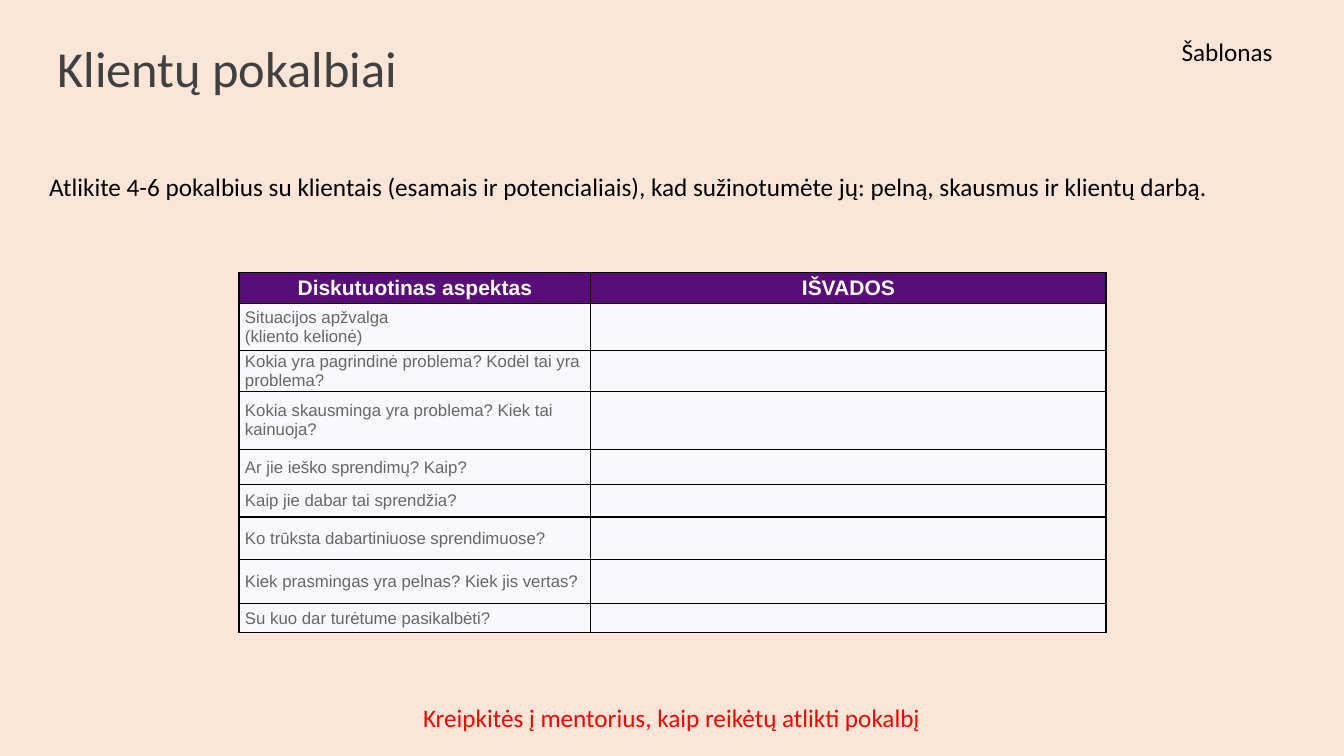
import pptx
import pptx.dml.color
import pptx.enum.shapes
import pptx.enum.text
import pptx.oxml
import pptx.oxml.ns
import pptx.util
from pptx.util import Inches

ALIGN = pptx.enum.text.PP_ALIGN
ANCHOR = pptx.enum.text.MSO_ANCHOR

TOPICS = [
    (0.47, "Situacijos apžvalga\n(kliento kelionė)"),
    (0.4, "Kokia yra pagrindinė problema? Kodėl tai yra problema?"),
    (0.58, "Kokia skausminga yra problema? Kiek tai kainuoja?"),
    (0.35, "Ar jie ieško sprendimų? Kaip?"),
    (0.32, "Kaip jie dabar tai sprendžia?"),
    (0.42, "Ko trūksta dabartiniuose sprendimuose?"),
    (0.44, "Kiek prasmingas yra pelnas? Kiek jis vertas?"),
    (0.29, "Su kuo dar turėtume pasikalbėti?"),
]


def rgb(value):
    """Turn a hex string into a colour."""
    return pptx.dml.color.RGBColor.from_string(value)


def style(paragraph, font, size, color, align=ALIGN.LEFT, bold=False):
    """Set the look of one paragraph."""
    paragraph.alignment = align
    paragraph.font.name = font
    paragraph.font.size = pptx.util.Pt(size)
    paragraph.font.color.rgb = rgb(color)
    paragraph.font.bold = bold


def add_backdrop(slide, width, height, color):
    """Cover the slide with one colour."""
    backdrop = slide.shapes.add_shape(
        pptx.enum.shapes.MSO_SHAPE.RECTANGLE, 0, 0, width, height)
    backdrop.shadow.inherit = False
    backdrop.fill.solid()
    backdrop.fill.fore_color.rgb = rgb(color)
    backdrop.line.fill.background()


def add_title(slide, box, text):
    """Place the slide title, centred vertically in its box."""
    frame = slide.shapes.add_textbox(*map(Inches, box)).text_frame
    frame.word_wrap = True
    frame.vertical_anchor = ANCHOR.MIDDLE
    frame.margin_left = frame.margin_right = 0
    frame.margin_top = frame.margin_bottom = 0
    frame.text = text
    frame.paragraphs[0].line_spacing = 0.9
    style(frame.paragraphs[0], "Calibri", 36, "404040")


def add_note(slide, box, text, color="000000", align=ALIGN.LEFT):
    """Place a single line of text that does not wrap."""
    frame = slide.shapes.add_textbox(*map(Inches, box)).text_frame
    frame.word_wrap = False
    frame.auto_size = pptx.enum.text.MSO_AUTO_SIZE.SHAPE_TO_FIT_TEXT
    frame.text = text
    style(frame.paragraphs[0], "Calibri", 18, color, align)


def add_borders(cell):
    """Draw a thin black line on every side of a cell."""
    properties = cell._tc.get_or_add_tcPr()
    for position, side in enumerate(("lnL", "lnR", "lnT", "lnB")):
        properties.insert(position, pptx.oxml.parse_xml(
            f'<a:{side} {pptx.oxml.ns.nsdecls("a")} w="12700"><a:solidFill>'
            f'<a:srgbClr val="000000"/></a:solidFill></a:{side}>'))


def fill_cell(cell, text, fill, **look):
    """Write, colour and frame one table cell."""
    cell.text = text
    cell.vertical_anchor = ANCHOR.MIDDLE
    cell.margin_left = cell.margin_right = Inches(0.06)
    cell.margin_top = cell.margin_bottom = 0
    cell.fill.solid()
    cell.fill.fore_color.rgb = rgb(fill)
    for paragraph in cell.text_frame.paragraphs:
        style(paragraph, "Arial", **look)
    add_borders(cell)


def add_interview_table(slide, box):
    """Place the table of interview topics and conclusions."""
    rows = [(0.31, "Diskutuotinas aspektas", "IŠVADOS")]
    rows += [(height, topic, "") for height, topic in TOPICS]
    table = slide.shapes.add_table(len(rows), 2, *map(Inches, box)).table
    topic_width = 3.49
    table.columns[0].width = Inches(topic_width)
    table.columns[1].width = Inches(box[2] - topic_width)
    for index, (height, *texts) in enumerate(rows):
        table.rows[index].height = Inches(height)
        for column, text in enumerate(texts):
            cell = table.cell(index, column)
            if index == 0:
                fill_cell(cell, text, "580D78", size=15, color="FFFFFF",
                          align=ALIGN.CENTER, bold=True)
            else:
                fill_cell(cell, text, "F9F8FE", size=12, color="666666")


def main():
    """Build the customer interview slide."""
    deck = pptx.Presentation()
    deck.slide_width, deck.slide_height = Inches(13.33), Inches(7.5)
    slide = deck.slides.add_slide(deck.slide_layouts[6])
    add_backdrop(slide, deck.slide_width, deck.slide_height, "FBE5D6")
    add_title(slide, (0.57, 0.41, 12.2, 0.6), "Klientų pokalbiai")
    add_note(slide, (0.39, 1.65, 11.87, 0.4),
             "Atlikite 4-6 pokalbius su klientais (esamais ir potencialiais), "
             "kad sužinotumėte jų: pelną, skausmus ir klientų darbą.")
    add_interview_table(slide, (2.37, 2.7, 8.6, 3.58))
    add_note(slide, (11.62, 0.31, 1.12, 0.4), "Šablonas")
    add_note(slide, (4.07, 6.92, 5.18, 0.4),
             "Kreipkitės į mentorius, kaip reikėtų atlikti pokalbį",
             "FF0000", ALIGN.CENTER)
    deck.save("out.pptx")


if __name__ == "__main__":
    main()
